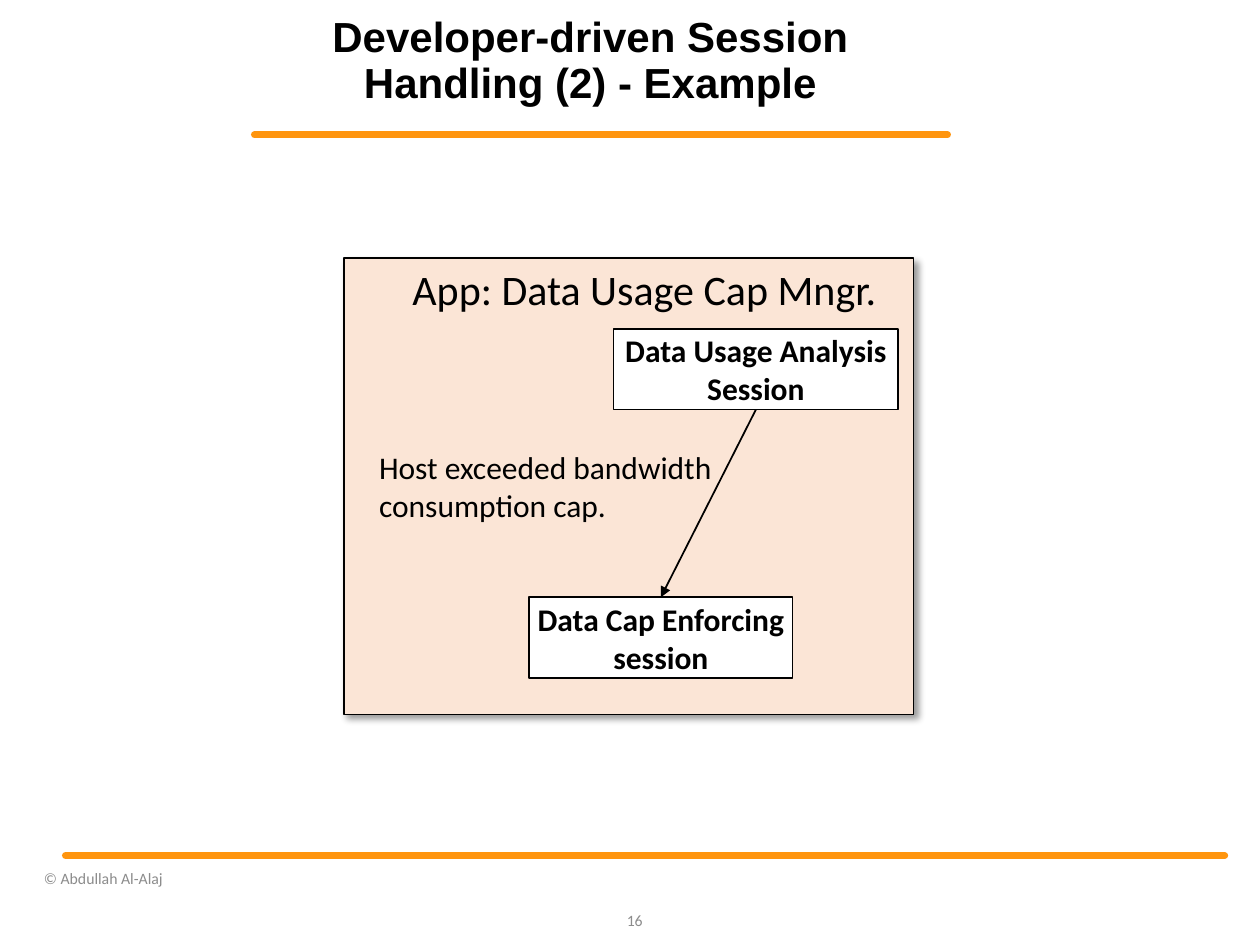
from lxml.etree import SubElement
from pptx import Presentation
from pptx.dml.color import RGBColor
from pptx.enum.shapes import MSO_CONNECTOR, MSO_SHAPE
from pptx.enum.text import MSO_ANCHOR, MSO_AUTO_SIZE, PP_ALIGN
from pptx.oxml import parse_xml
from pptx.oxml.ns import nsdecls, qn
from pptx.util import Inches, Pt


def rgb(value):
    return RGBColor.from_string(value)


def write(shape, text, size, color="000000", bold=False, align=PP_ALIGN.LEFT,
          anchor=MSO_ANCHOR.MIDDLE, font="Calibri", inset=None):
    tf = shape.text_frame
    tf.word_wrap = True
    tf.auto_size = MSO_AUTO_SIZE.NONE
    tf.vertical_anchor = anchor
    if inset is not None:
        tf.margin_left = tf.margin_top = tf.margin_right = tf.margin_bottom = inset
    tf.text = text
    p = tf.paragraphs[0]
    p.alignment = align
    r = p.runs[0]
    r.font.name, r.font.size, r.font.bold = font, Pt(size), bold
    r.font.color.rgb = rgb(color)


prs = Presentation()
prs.slide_width, prs.slide_height = Inches(10), Inches(7.5)
s = prs.slides.add_slide(prs.slide_layouts[5])

# Orange rules under the title and above the footer
for x1, x2, y in [(2.02, 7.52, 1.07), (0.52, 9.72, 6.79)]:
    rule = s.shapes.add_connector(
        MSO_CONNECTOR.STRAIGHT, Inches(x1), Inches(y), Inches(x2), Inches(y))
    rule.line.color.rgb = rgb("FF950E")
    rule.line.width = Pt(4)
    rule.line._get_or_add_ln().set("cap", "rnd")
    SubElement(rule._element.spPr, qn("a:effectLst"))

# Title
title = s.shapes.title
title.left, title.top = Inches(1.99), Inches(0.34)
title.width, title.height = Inches(5.39), Inches(0.51)
write(title, "Developer-driven Session Handling (2) - Example", 24, bold=True,
      align=PP_ALIGN.CENTER, anchor=MSO_ANCHOR.BOTTOM, font="Arial", inset=0)
title.text_frame.paragraphs[0].line_spacing = 0.9

# App panel and session boxes
boxes = []
for x, y, w, h, fill, text in [
    (2.73, 2.05, 4.52, 3.62, "FBE5D6", ""),
    (4.87, 2.61, 2.26, 0.64, "FFFFFF", "Data Usage Analysis Session"),
    (4.2, 4.74, 2.09, 0.64, "FFFFFF", "Data Cap Enforcing session"),
]:
    box = s.shapes.add_shape(
        MSO_SHAPE.RECTANGLE, Inches(x), Inches(y), Inches(w), Inches(h))
    box.shadow.inherit = False
    box.fill.solid()
    box.fill.fore_color.rgb = rgb(fill)
    box.line.color.rgb = rgb("000000")
    box.line.width = Pt(1)
    if text:
        write(box, text, 18, bold=True, align=PP_ALIGN.CENTER, inset=0)
    boxes.append(box)
panel, analysis, enforcing = boxes

# Panel shadow
panel._element.spPr.find(qn("a:effectLst")).append(parse_xml(
    f'<a:outerShdw {nsdecls("a")} blurRad="{Pt(4)}" dist="{Pt(3)}" dir="2700000" '
    'algn="tl" rotWithShape="0"><a:srgbClr val="000000"><a:alpha val="40000"/>'
    '</a:srgbClr></a:outerShdw>'))

# Arrow from analysis to enforcing
arrow = s.shapes.add_connector(MSO_CONNECTOR.STRAIGHT, 0, 0, 0, 0)
arrow.begin_connect(analysis, 2)
arrow.end_connect(enforcing, 0)
arrow.line.color.rgb = rgb("000000")
arrow.line.width = Pt(1)
SubElement(arrow.line._get_or_add_ln(), qn("a:tailEnd"), type="triangle")
SubElement(arrow._element.spPr, qn("a:effectLst"))

# Labels, slide number and copyright
for x, y, w, h, text, size, color, align, anchor in [
    (3.06, 2.03, 4.11, 0.53, "App: Data Usage Cap Mngr.", 24, "000000",
     PP_ALIGN.CENTER, MSO_ANCHOR.MIDDLE),
    (2.91, 3.51, 3.35, 0.71, "Host exceeded bandwidth consumption cap.", 18, "000000",
     PP_ALIGN.LEFT, MSO_ANCHOR.TOP),
    (4.8, 7.1, 0.4, 0.4, "16", 9, "8C8C8C", PP_ALIGN.RIGHT, MSO_ANCHOR.MIDDLE),
    (0.25, 6.79, 2.75, 0.36, "© Abdullah Al-Alaj", 9, "8C8C8C",
     PP_ALIGN.LEFT, MSO_ANCHOR.MIDDLE),
]:
    label = s.shapes.add_textbox(Inches(x), Inches(y), Inches(w), Inches(h))
    write(label, text, size, color, align=align, anchor=anchor)

prs.save("out.pptx")
